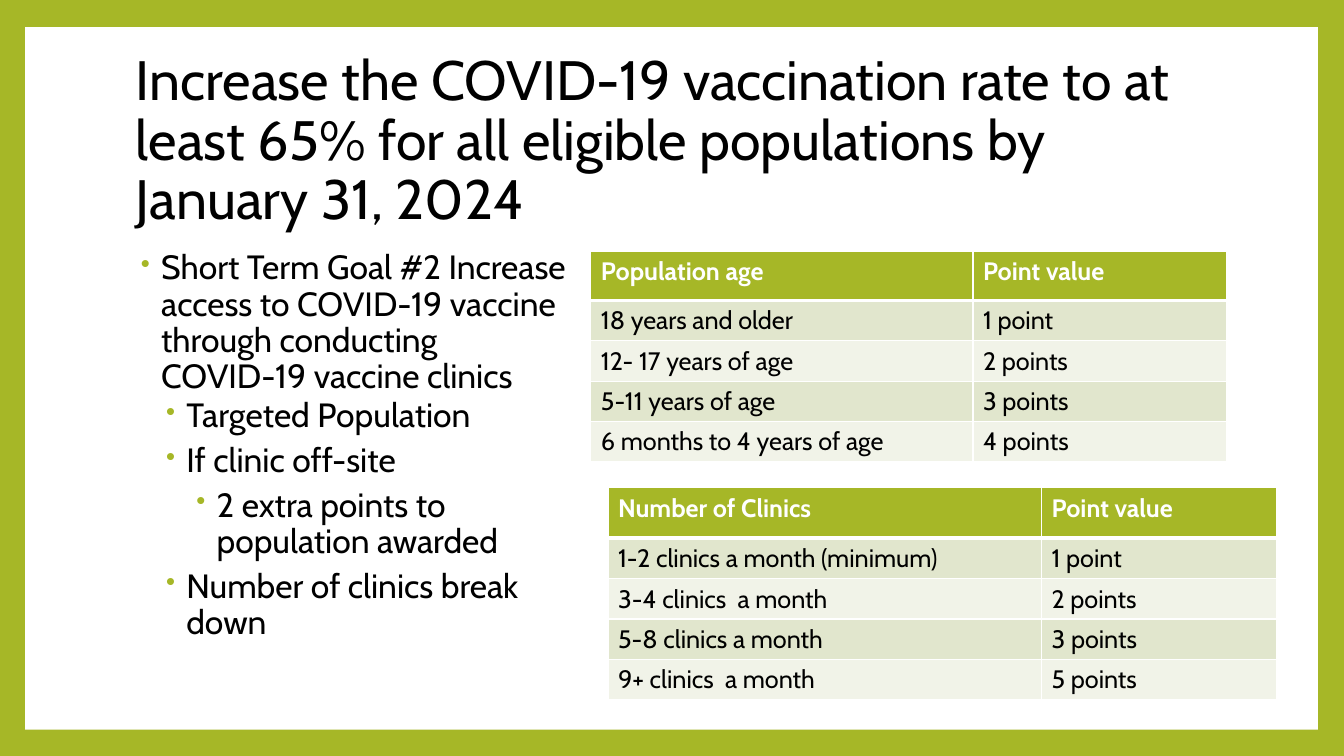
from lxml.etree import SubElement as Sub
from pptx import Presentation
from pptx.dml.color import RGBColor
from pptx.enum.shapes import MSO_SHAPE as Shape
from pptx.enum.text import MSO_ANCHOR as Anchor
from pptx.oxml.ns import qn
from pptx.util import Pt

PX = 9144  # EMU in one px, 100 px to the inch
GREEN, WHITE, BLACK = "A6B727", "FFFFFF", "000000"
BANDS = ["E1E6CD", "F1F3E8"]

TITLE = ("Increase the COVID-19 vaccination rate to at least 65% "
         "for all eligible populations by January 31, 2024")
GOALS = [
    (0, "Short Term Goal #2 Increase access to COVID-19 vaccine "
        "through conducting COVID-19 vaccine clinics"),
    (1, "Targeted Population"),
    (1, "If clinic off-site"),
    (2, "2 extra points to population awarded"),
    (1, "Number of clinics break down"),
]
AGES = [
    ("Population age", "Point value"),
    ("18 years and older", "1 point"),
    ("12- 17 years of age", "2 points"),
    ("5-11 years of age", "3 points"),
    ("6 months to 4 years of age", "4 points"),
]
CLINICS = [
    ("Number of Clinics", "Point value"),
    ("1-2 clinics a month (minimum)", "1 point"),
    ("3-4 clinics  a month", "2 points"),
    ("5-8 clinics a month", "3 points"),
    ("9+ clinics  a month", "5 points"),
]


def px(*nums):
    return [n * PX for n in nums]


def paint(fill, color):
    fill.solid()
    fill.fore_color.rgb = RGBColor.from_string(color)


def edge(cell, side, width):
    """Draw one white cell border; side is L, R, T or B."""
    line = Sub(cell._tc.get_or_add_tcPr(), qn("a:ln" + side), w=str(Pt(width)))
    Sub(Sub(line, qn("a:solidFill")), qn("a:srgbClr"), val=WHITE)


class Deck:
    font = "Cabin"
    indents = [25, 50, 80]
    hang = 20

    def __init__(self, wide, high):
        self.file = Presentation()
        self.file.slide_width, self.file.slide_height = px(wide, high)
        self.slide = self.file.slides.add_slide(self.file.slide_layouts[6])
        self.shapes = self.slide.shapes

    def frame(self, color, *box):
        """Fill the slide with color and lay a white panel on it."""
        paint(self.slide.background.fill, color)
        panel = self.shapes.add_shape(Shape.RECTANGLE, *px(*box))
        panel.shadow.inherit = False
        paint(panel.fill, WHITE)
        panel.line.fill.background()

    def style(self, para, size, color=BLACK, bold=False):
        font = para.font
        font.name, font.size, font.bold = self.font, Pt(size), bold
        paint(font.fill, color)

    def text(self, *box, anchor=Anchor.TOP):
        frame = self.shapes.add_textbox(*px(*box)).text_frame
        frame.word_wrap = True
        frame.vertical_anchor = anchor
        return frame

    def title(self, words, *box):
        para = self.text(*box, anchor=Anchor.MIDDLE).paragraphs[0]
        para.text, para.line_spacing = words, 0.9
        self.style(para, 39.6)

    def bullet(self, para, level):
        props = para._p.get_or_add_pPr()
        props.set("marL", str(self.indents[level] * PX))
        props.set("indent", str(-self.hang * PX))
        Sub(Sub(props, qn("a:buClr")), qn("a:srgbClr"), val=GREEN)
        Sub(props, qn("a:buSzPct"), val="80000")
        Sub(props, qn("a:buChar"), char="•")

    def bullets(self, items, *box):
        frame = self.text(*box)
        for i, (level, words) in enumerate(items):
            para = frame.add_paragraph() if i else frame.paragraphs[0]
            para.text, para.level, para.line_spacing = words, level, 0.9
            para.space_before = Pt(2 if level else 14)
            para.space_after = Pt(4 if level else 0)
            self.bullet(para, level)
            self.style(para, 24)

    def cell(self, cell, words, row):
        for side in "LRTB":
            thick = (row, side) in [(0, "B"), (1, "T")]
            edge(cell, side, 3 if thick else 1)
        paint(cell.fill, BANDS[(row - 1) % 2] if row else GREEN)
        cell.text = words
        para = cell.text_frame.paragraphs[0]
        self.style(para, 18, BLACK if row else WHITE, not row)

    def table(self, rows, left, top, cols, head, step=40):
        """Add a table with a head row and rows of height step."""
        high = head + step * (len(rows) - 1)
        table = self.shapes.add_table(
            len(rows), len(cols), *px(left, top, sum(cols), high)).table
        for col, wide in zip(table.columns, px(*cols)):
            col.width = wide
        for r, line in enumerate(rows):
            table.rows[r].height = (step if r else head) * PX
            for c, words in enumerate(line):
                self.cell(table.cell(r, c), words, r)


def main():
    deck = Deck(1333, 750)
    deck.frame(GREEN, 25, 27, 1282, 697)
    deck.title(TITLE, 125, 67, 1080, 148)
    deck.bullets(GOALS, 125, 244, 461, 442)
    deck.table(AGES, 586, 249, [379, 252], 49)
    deck.table(CLINICS, 603, 484, [430, 233], 50)
    deck.file.save("out.pptx")


if __name__ == "__main__":
    main()
